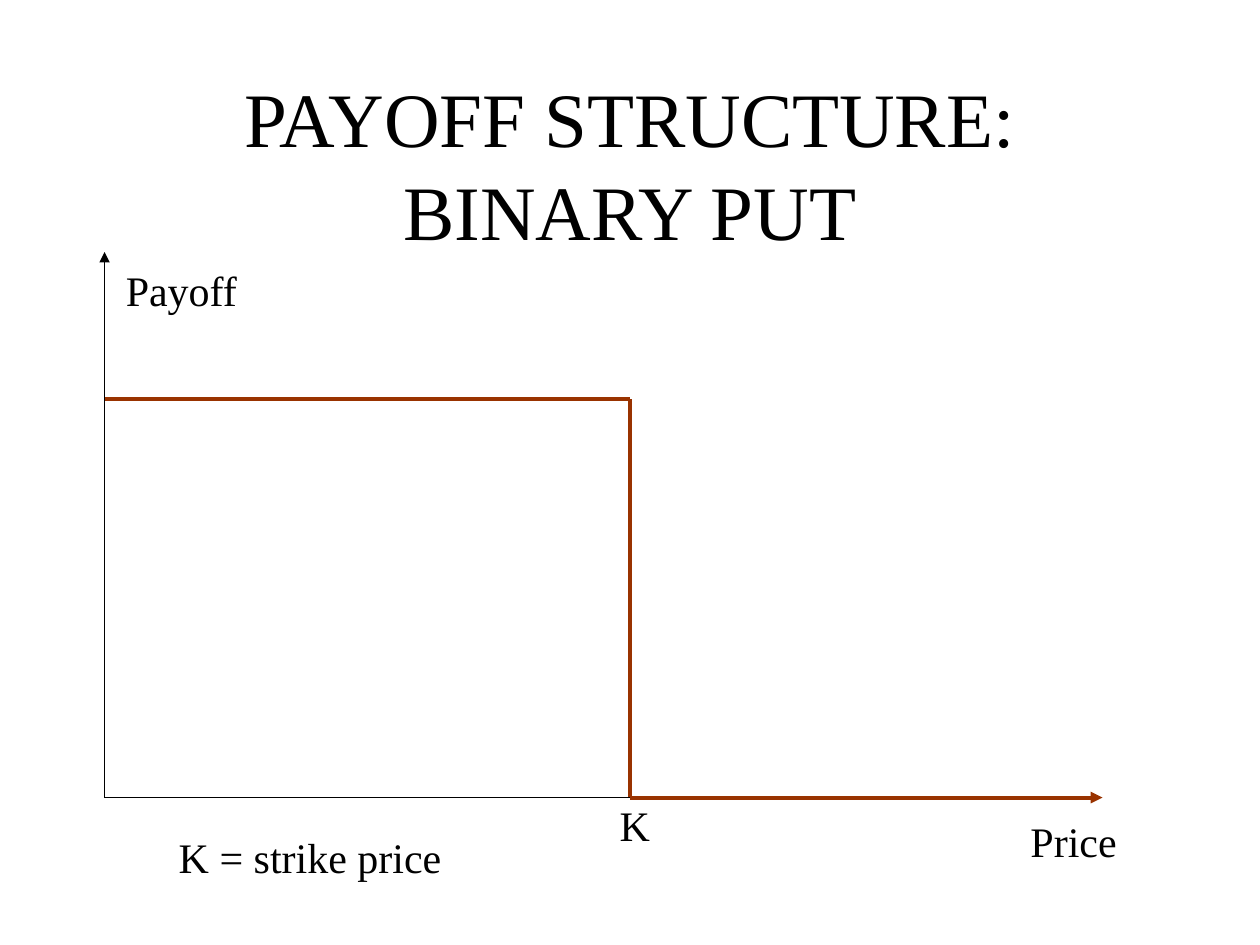
"""Build the binary put payoff slide."""
import pptx
import pptx.dml.color
import pptx.enum.shapes
import pptx.enum.text
import pptx.oxml.ns
import pptx.util
from pptx.util import Inches
import lxml.etree

BLACK = "000000"
BROWN = "993300"


def color(hex_string):
    return pptx.dml.color.RGBColor.from_string(hex_string)


def write_text(shape, text, size=24, align="LEFT", anchor="TOP", wrap=False, fit="SHAPE_TO_FIT_TEXT"):
    frame = shape.text_frame
    frame.word_wrap = wrap
    frame.auto_size = getattr(pptx.enum.text.MSO_AUTO_SIZE, fit)
    frame.vertical_anchor = getattr(pptx.enum.text.MSO_ANCHOR, anchor)
    paragraph = frame.paragraphs[0]
    paragraph.alignment = getattr(pptx.enum.text.PP_ALIGN, align)
    run = paragraph.add_run()
    run.text = text
    run.font.name = "Times New Roman"
    run.font.size = pptx.util.Pt(size)
    run.font.color.rgb = color(BLACK)


presentation = pptx.Presentation()
presentation.slide_width = Inches(10)
presentation.slide_height = Inches(7.5)
slide = presentation.slides.add_slide(presentation.slide_layouts[5])

title = slide.shapes.title
title.left, title.top = Inches(0.75), Inches(0.67)
title.width, title.height = Inches(8.5), Inches(1.25)
write_text(title, "PAYOFF STRUCTURE: BINARY PUT", size=44, align="CENTER",
           anchor="MIDDLE", wrap=True, fit="NONE")

labels = [
    ("K", 4.82, 6.3, 0.46),
    ("Price", 8.08, 6.42, 0.92),
    ("K = strike price", 1.32, 6.55, 2.32),
    ("Payoff", 0.9, 2.05, 1.12),
]
for text, left, top, width in labels:
    label = slide.shapes.add_textbox(Inches(left), Inches(top), Inches(width), Inches(0.5))
    write_text(label, text)

axis_x, axis_y = 0.83, 6.33
strike_x, payoff_y = 5, 3.17
lines = [
    ((axis_x, 2), (axis_x, axis_y), BLACK, 0.75, "a:headEnd"),
    ((strike_x, axis_y), (strike_x, payoff_y), BROWN, 2.25, None),
    ((axis_x, axis_y), (strike_x, axis_y), BLACK, 0.75, None),
    ((strike_x, axis_y), (8.75, axis_y), BROWN, 2.25, "a:tailEnd"),
    ((strike_x, payoff_y), (axis_x, payoff_y), BROWN, 2.25, None),
]
for start, end, line_color, width, arrow in lines:
    connector = slide.shapes.add_connector(
        pptx.enum.shapes.MSO_CONNECTOR.STRAIGHT, *map(Inches, start + end))
    connector.line.color.rgb = color(line_color)
    connector.line.width = pptx.util.Pt(width)
    properties = connector.element.spPr
    if arrow:
        outline = properties.find(pptx.oxml.ns.qn("a:ln"))
        lxml.etree.SubElement(outline, pptx.oxml.ns.qn(arrow), type="triangle")
    lxml.etree.SubElement(properties, pptx.oxml.ns.qn("a:effectLst"))

presentation.save("out.pptx")
